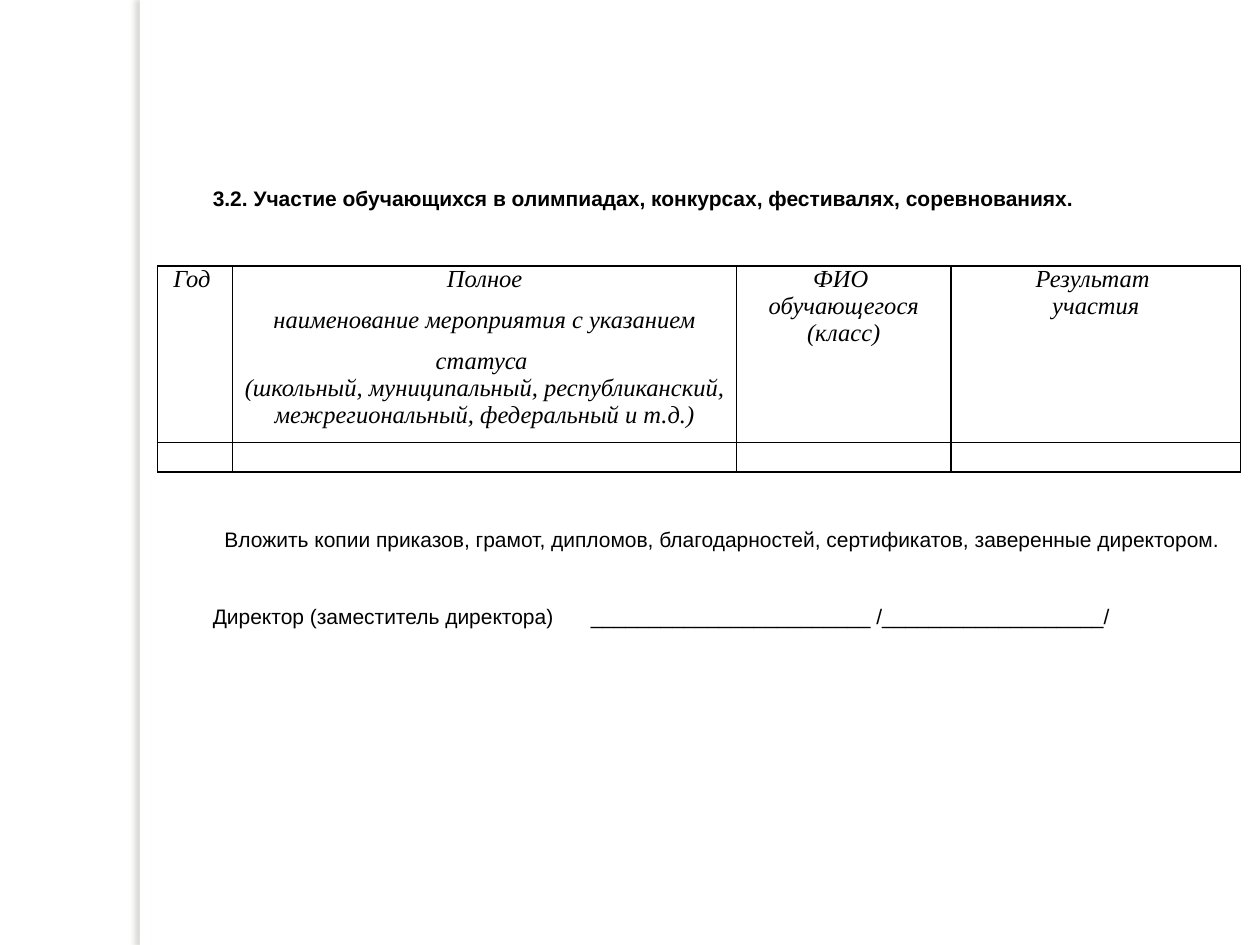
from dataclasses import dataclass

from lxml.etree import SubElement
from pptx import Presentation
from pptx.dml.color import RGBColor
from pptx.enum.shapes import MSO_SHAPE
from pptx.enum.text import MSO_ANCHOR, PP_ALIGN
from pptx.oxml import parse_xml
from pptx.oxml.ns import nsdecls, qn
from pptx.slide import Slide
from pptx.table import _Cell
from pptx.text.text import _Paragraph
from pptx.util import Pt

BLACK = "000000"
WHITE = "FFFFFF"


@dataclass
class BodyLine:
    text: str
    space_before: float = 0
    indent: float = 36
    tab: float = 126
    bold: bool = False


@dataclass
class CellLine:
    text: str
    spacing: float = 1.0


@dataclass
class Column:
    width: float
    heading: list[CellLine]


BODY_LINES = [
    BodyLine("3.2. Участие обучающихся в олимпиадах, конкурсах, фестивалях, соревнованиях.",
             bold=True),
    BodyLine("Вложить копии приказов, грамот, дипломов, благодарностей, сертификатов, "
             "заверенные директором.", space_before=180.5, indent=42.7),
    BodyLine("Директор (заместитель директора)\t________________________ /___________________/",
             space_before=29.6, tab=250.4),
]

COLUMNS = [
    Column(43, [CellLine("Год ")]),
    Column(288, [
        CellLine("Полное"),
        CellLine("наименование мероприятия с указанием статуса ", 1.5),
        CellLine("(школьный, муниципальный, республиканский, межрегиональный, федеральный и т.д.)"),
    ]),
    Column(122.4, [CellLine("ФИО "), CellLine("обучающегося"), CellLine("(класс)")]),
    Column(165.6, [CellLine("Результат "), CellLine("участия")]),
]
ROW_HEIGHTS = [100.6, 17]


def color(value: str) -> RGBColor:
    return RGBColor.from_string(value)


def style_font(paragraph: _Paragraph, name: str, size: float,
               bold: bool = False, italic: bool = False) -> None:
    font = paragraph.font
    font.name, font.size = name, Pt(size)
    font.bold, font.italic = bold, italic
    font.color.rgb = color(BLACK)


def add_side_strip(slide: Slide) -> None:
    strip = slide.shapes.add_shape(MSO_SHAPE.RECTANGLE, Pt(80), Pt(0), Pt(5.8), Pt(540))
    strip.fill.solid()
    strip.fill.fore_color.rgb = color(WHITE)
    strip.line.fill.background()
    strip.shadow.inherit = False
    effects = strip.element.spPr.find(qn("a:effectLst"))
    effects.append(parse_xml(
        f'<a:outerShdw {nsdecls("a")} blurRad="{Pt(3)}" dist="{Pt(3)}" dir="10800000" '
        'algn="tl" rotWithShape="0"><a:srgbClr val="736F63"><a:alpha val="25000"/>'
        '</a:srgbClr></a:outerShdw>'))


def add_body(slide: Slide, lines: list[BodyLine]) -> None:
    box = slide.shapes.add_textbox(Pt(78.5), Pt(101.5), Pt(641.5), Pt(262))
    frame = box.text_frame
    frame.word_wrap = True
    frame.vertical_anchor = MSO_ANCHOR.MIDDLE
    for index, line in enumerate(lines):
        paragraph = frame.paragraphs[0] if index == 0 else frame.add_paragraph()
        paragraph.text = line.text
        paragraph.space_before = Pt(line.space_before)
        style_font(paragraph, "Arial", 12, bold=line.bold)
        # First-line indent and tab stop
        properties = paragraph._p.get_or_add_pPr()
        properties.set("marL", "0")
        properties.set("indent", str(Pt(line.indent)))
        tabs = parse_xml(f'<a:tabLst {nsdecls("a")}/>')
        SubElement(tabs, qn("a:tab"), pos=str(Pt(line.tab)), algn="l")
        properties.find(qn("a:defRPr")).addprevious(tabs)


def set_borders(cell: _Cell) -> None:
    properties = cell._tc.get_or_add_tcPr()
    for index, side in enumerate("LRTB"):
        properties.insert(index, parse_xml(
            f'<a:ln{side} {nsdecls("a")} w="{Pt(1)}"><a:solidFill>'
            f'<a:srgbClr val="{BLACK}"/></a:solidFill></a:ln{side}>'))


def fill_cell(cell: _Cell, lines: list[CellLine]) -> None:
    cell.margin_left = cell.margin_right = Pt(3.6)
    cell.margin_top = cell.margin_bottom = Pt(0)
    cell.fill.background()
    set_borders(cell)
    frame = cell.text_frame
    for index, line in enumerate(lines):
        paragraph = frame.paragraphs[0] if index == 0 else frame.add_paragraph()
        paragraph.text = line.text
        paragraph.alignment = PP_ALIGN.CENTER
        paragraph.line_spacing = line.spacing
        style_font(paragraph, "Times New Roman", 14, italic=True)


def add_results_table(slide: Slide, columns: list[Column]) -> None:
    width = sum(column.width for column in columns)
    table = slide.shapes.add_table(len(ROW_HEIGHTS), len(columns), Pt(90), Pt(152),
                                   Pt(width), Pt(sum(ROW_HEIGHTS))).table
    table.first_row = table.horz_banding = False
    for row, height in zip(table.rows, ROW_HEIGHTS):
        row.height = Pt(height)
    for index, column in enumerate(columns):
        table.columns[index].width = Pt(column.width)
        fill_cell(table.cell(0, index), column.heading)
        fill_cell(table.cell(1, index), [CellLine("")])


def main() -> None:
    presentation = Presentation()
    presentation.slide_width, presentation.slide_height = Pt(720), Pt(540)
    slide = presentation.slides.add_slide(presentation.slide_layouts[6])
    slide.background.fill.solid()
    slide.background.fill.fore_color.rgb = color(WHITE)

    # Side strip, text around the table, then the table
    add_side_strip(slide)
    add_body(slide, BODY_LINES)
    add_results_table(slide, COLUMNS)
    presentation.save("out.pptx")


if __name__ == "__main__":
    main()
